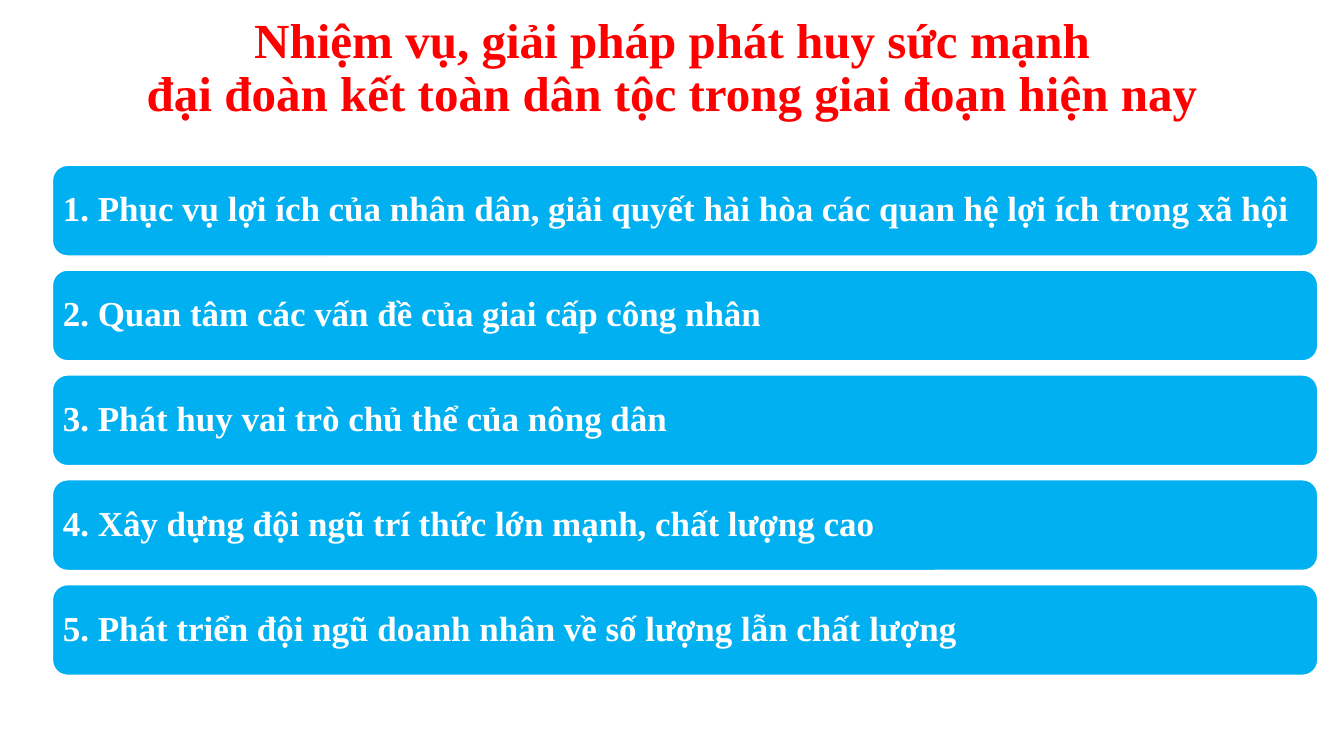
from dataclasses import dataclass

from pptx import Presentation
from pptx.dml.color import RGBColor
from pptx.enum.shapes import MSO_SHAPE
from pptx.enum.text import MSO_ANCHOR, MSO_AUTO_SIZE, PP_ALIGN
from pptx.util import Inches, Pt


@dataclass(frozen=True)
class Theme:
    font: str = "Times New Roman"
    title_color: str = "FF0000"
    bar_color: str = "00B0F0"
    light: str = "FFFFFF"
    title_size: int = 35
    bar_size: int = 25


THEME = Theme()
SLIDE_WIDTH, SLIDE_HEIGHT = 13.33, 7.5
BAR_LEFT, BAR_TOP = 0.52, 1.64
BAR_WIDTH, BAR_HEIGHT, BAR_STEP = 12.55, 0.9, 1.04

TITLE = "Nhiệm vụ, giải pháp phát huy sức mạnh\vđại đoàn kết toàn dân tộc trong giai đoạn hiện nay"
TASKS = [
    "Phục vụ lợi ích của nhân dân, giải quyết hài hòa các quan hệ lợi ích trong xã hội",
    "Quan tâm các vấn đề của giai cấp công nhân",
    "Phát huy vai trò chủ thể của nông dân",
    "Xây dựng đội ngũ trí thức lớn mạnh, chất lượng cao",
    "Phát triển đội ngũ doanh nhân về số lượng lẫn chất lượng",
]


def write_text(shape, text, *, size, color, align, margins):
    """Fill the shape with bold text; margins are left, top, right, bottom in inches."""
    frame = shape.text_frame
    frame.word_wrap = True
    frame.auto_size = MSO_AUTO_SIZE.NONE
    frame.vertical_anchor = MSO_ANCHOR.MIDDLE
    (frame.margin_left, frame.margin_top,
     frame.margin_right, frame.margin_bottom) = map(Inches, margins)
    paragraph = frame.paragraphs[0]
    paragraph.text = text
    paragraph.alignment = align
    paragraph.line_spacing = 0.9
    for run in paragraph.runs:
        run.font.name = THEME.font
        run.font.size = Pt(size)
        run.font.bold = True
        run.font.color.rgb = RGBColor.from_string(color)


def place_title(slide, text):
    title = slide.shapes.title
    title.left, title.top = Inches(0.92), Inches(0.4)
    title.width, title.height = Inches(11.5), Inches(1.11)
    # The deep bottom margin lifts both lines towards the slide's top edge.
    write_text(title, text, size=THEME.title_size, color=THEME.title_color,
               align=PP_ALIGN.CENTER, margins=(0.1, 0.05, 0.1, 0.58))


def add_task_bar(slide, row, text):
    bar = slide.shapes.add_shape(
        MSO_SHAPE.ROUNDED_RECTANGLE,
        Inches(BAR_LEFT), Inches(BAR_TOP + row * BAR_STEP),
        Inches(BAR_WIDTH), Inches(BAR_HEIGHT))
    bar.shadow.inherit = False
    bar.fill.solid()
    bar.fill.fore_color.rgb = RGBColor.from_string(THEME.bar_color)
    bar.line.color.rgb = RGBColor.from_string(THEME.light)
    bar.line.width = Pt(1)
    write_text(bar, f"{row + 1}. {text}", size=THEME.bar_size, color=THEME.light,
               align=PP_ALIGN.LEFT, margins=(0.06, 0.06, 0.06, 0.06))


def main():
    presentation = Presentation()
    presentation.slide_width = Inches(SLIDE_WIDTH)
    presentation.slide_height = Inches(SLIDE_HEIGHT)
    title_only = presentation.slide_layouts.get_by_name("Title Only")
    slide = presentation.slides.add_slide(title_only)
    place_title(slide, TITLE)
    for row, task in enumerate(TASKS):
        add_task_bar(slide, row, task)
    presentation.save("out.pptx")


if __name__ == "__main__":
    main()
